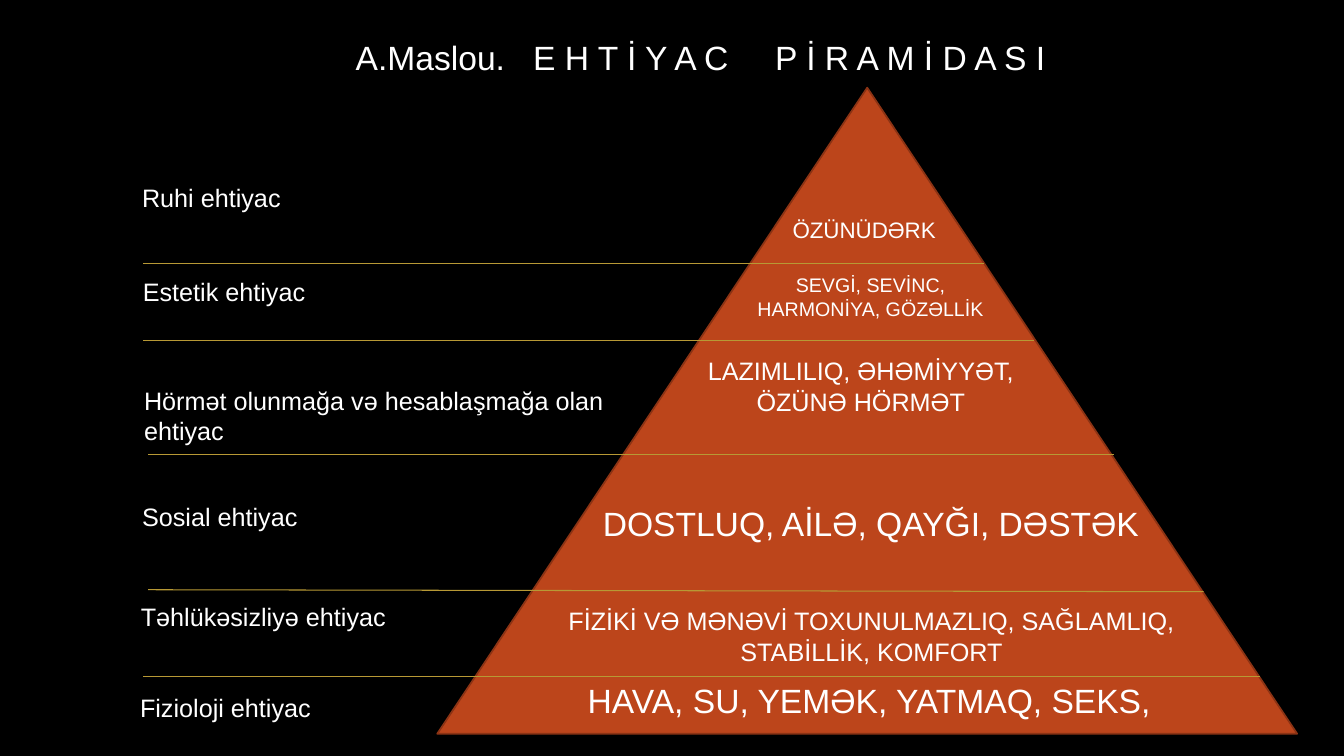
from dataclasses import dataclass
from typing import Optional

from lxml.etree import SubElement
from pptx import Presentation
from pptx.dml.color import RGBColor
from pptx.enum.shapes import MSO_CONNECTOR, MSO_SHAPE
from pptx.enum.text import MSO_ANCHOR, MSO_AUTO_SIZE, PP_ALIGN
from pptx.oxml.ns import qn
from pptx.util import Cm, Pt

COLORS = {
    "background": "000000",
    "pyramid": "BC451B",
    "edge": "8B3314",
    "divider": "B79935",
    "text": "FFFFFF",
}
FONT = "Arial"


@dataclass(frozen=True)
class Box:
    left: float
    top: float
    width: float = 7.06
    height: float = 1.02

    def lengths(self) -> tuple:
        return Cm(self.left), Cm(self.top), Cm(self.width), Cm(self.height)


@dataclass(frozen=True)
class Divider:
    left: float
    start_y: float
    right: float
    end_y: float


@dataclass(frozen=True)
class Level:
    need: str
    need_box: Box
    examples: str
    examples_box: Box
    size: int
    base: Optional[Divider] = None


# Pyramid levels from base to peak, each with the line it stands on
LEVELS = [
    Level("Fizioloji ehtiyac", Box(3.28, 17.32),
          "HAVA, SU, YEMƏK, YATMAQ, SEKS,", Box(12.75, 17.02, 18.31, 1.27), 24),
    Level("Təhlükəsizliyə ehtiyac", Box(3.3, 15.04),
          "FİZİKİ VƏ MƏNƏVİ TOXUNULMAZLIQ, SAĞLAMLIQ, STABİLLİK, KOMFORT",
          Box(13.06, 15.14, 17.81, 1.8), 18, Divider(3.61, 17.04, 31.75, 17.04)),
    Level("Sosial ehtiyac", Box(3.33, 12.52),
          "DOSTLUQ, AİLƏ, QAYĞI, DƏSTƏK", Box(14.76, 12.55, 14.38, 2.31), 24,
          Divider(3.73, 14.86, 30.33, 14.91)),
    Level("Hörmət olunmağa və hesablaşmağa olan ehtiyac", Box(3.38, 9.58, 12.95, 1.8),
          "LAZIMLILIQ, ƏHƏMİYYƏT, ÖZÜNƏ HÖRMƏT", Box(17.25, 8.84, 8.89, 2.57), 18,
          Divider(3.73, 11.46, 28.07, 11.46)),
    Level("Estetik ehtiyac", Box(3.35, 6.83),
          "SEVGİ, SEVİNC, HARMONİYA, GÖZƏLLİK", Box(18.42, 6.76, 7.04, 1.45), 14,
          Divider(3.61, 8.59, 26.06, 8.59)),
    Level("Ruhi ehtiyac", Box(3.33, 4.47),
          "ÖZÜNÜDƏRK", Box(19.43, 5.31, 4.7, 0.94), 16,
          Divider(3.61, 6.63, 24.79, 6.63)),
]

# Title words, with wide spaces between them (text, extra spacing in points)
TITLE_PARTS = [
    ("A.Maslou.", 0), (" ", 13.33),
    ("E H T İ Y A C", 0), (" ", 26.67),
    ("P İ R A M İ D A S I", 0),
]


def color(name: str) -> RGBColor:
    return RGBColor.from_string(COLORS[name])


def write(shape, *parts: tuple, size: int = 18, align=PP_ALIGN.LEFT) -> None:
    """Fill a shape with one paragraph of (text, extra spacing) parts."""
    frame = shape.text_frame
    frame.word_wrap = True
    frame.auto_size = MSO_AUTO_SIZE.SHAPE_TO_FIT_TEXT
    frame.vertical_anchor = MSO_ANCHOR.TOP
    paragraph = frame.paragraphs[0]
    paragraph.alignment = align
    for text, spacing in parts:
        run = paragraph.add_run()
        run.text = text
        run.font.name = FONT
        run.font.size = Pt(size)
        run.font.color.rgb = color("text")
        if spacing:
            run.font._element.set("spc", str(round(spacing * 100)))


def draw_divider(slide, divider: Divider) -> None:
    line = slide.shapes.add_connector(
        MSO_CONNECTOR.STRAIGHT, Cm(divider.left), Cm(divider.start_y),
        Cm(divider.right), Cm(divider.end_y))
    line.line.color.rgb = color("divider")
    line.line.width = Pt(0.75)
    SubElement(line._element.spPr, qn("a:effectLst"))


def draw_pyramid(slide, box: Box) -> None:
    pyramid = slide.shapes.add_shape(MSO_SHAPE.ISOSCELES_TRIANGLE, *box.lengths())
    pyramid.shadow.inherit = False
    pyramid.fill.solid()
    pyramid.fill.fore_color.rgb = color("pyramid")
    pyramid.line.color.rgb = color("edge")
    pyramid.line.width = Pt(1.25)


def draw_level(slide, level: Level) -> None:
    if level.base:
        draw_divider(slide, level.base)
    examples = slide.shapes.add_textbox(*level.examples_box.lengths())
    write(examples, (level.examples, 0), size=level.size, align=PP_ALIGN.CENTER)
    need = slide.shapes.add_textbox(*level.need_box.lengths())
    write(need, (level.need, 0))


def main() -> None:
    deck = Presentation()
    deck.slide_width, deck.slide_height = Cm(33.87), Cm(19.05)
    slide = deck.slides.add_slide(deck.slide_layouts.get_by_name("Title Only"))
    slide.background.fill.solid()
    slide.background.fill.fore_color.rgb = color("background")

    # Title
    title = slide.shapes.title
    title.left, title.top, title.width, title.height = Box(8.71, 0.79, 19.05, 1.27).lengths()
    write(title, *TITLE_PARTS, size=24)

    # Pyramid and its levels
    draw_pyramid(slide, Box(11.02, 2.21, 21.67, 16.28))
    for level in LEVELS:
        draw_level(slide, level)

    deck.save("out.pptx")


if __name__ == "__main__":
    main()
